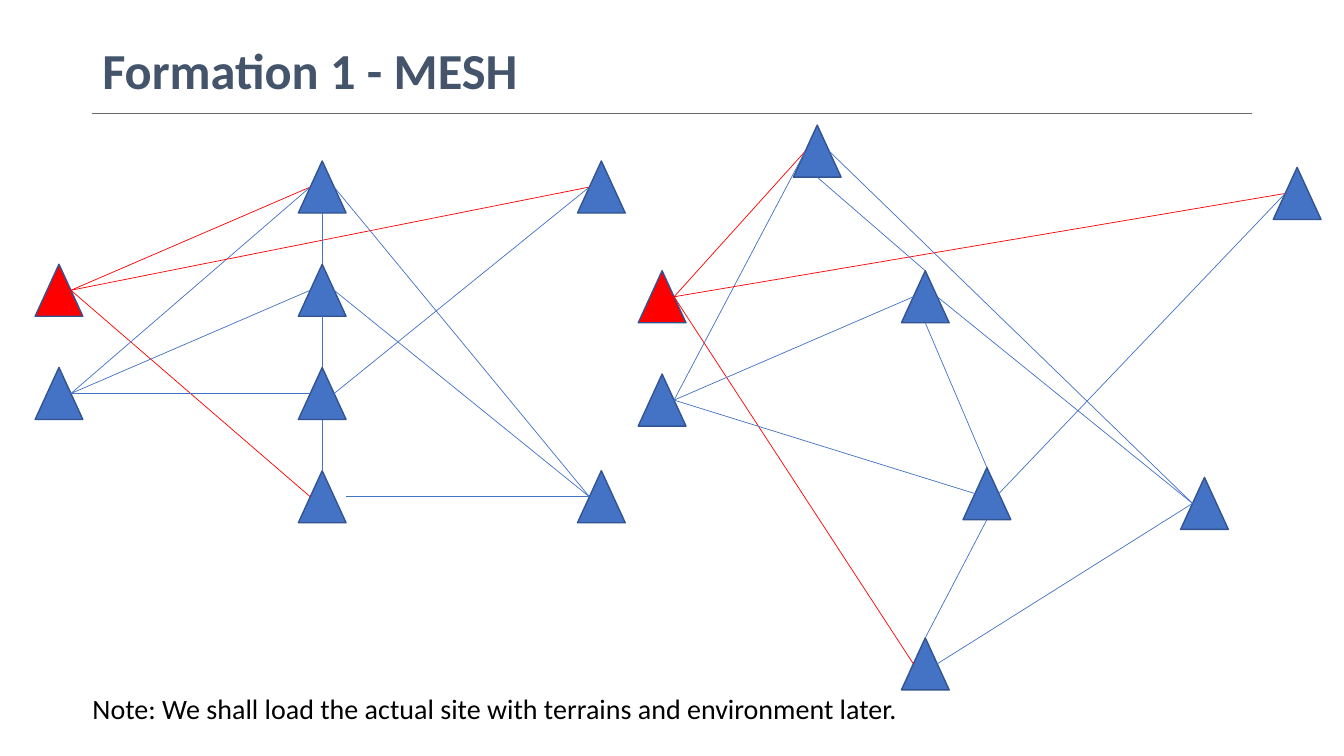
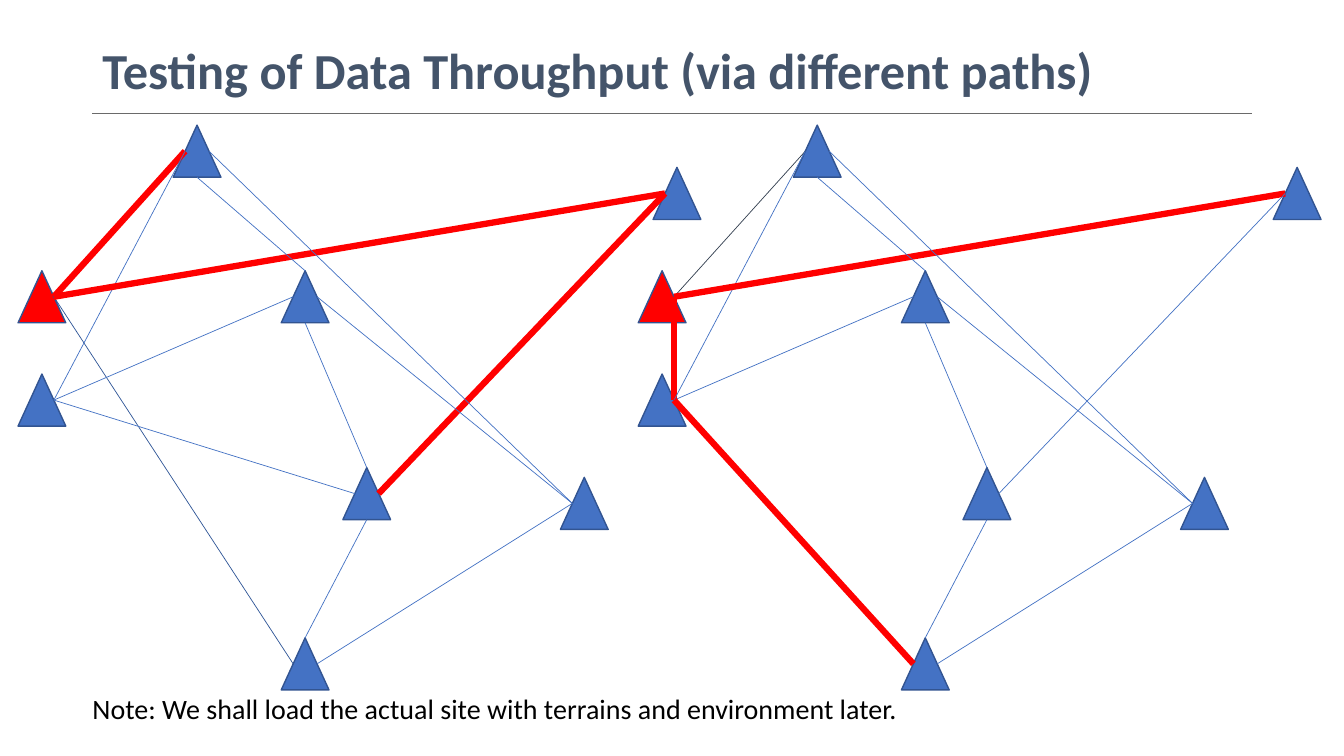
from lxml import etree
from pptx import Presentation
from pptx.dml.color import RGBColor
from pptx.enum import shapes, text
from pptx.oxml import ns
from pptx.util import Pt

BLUE = RGBColor(0x44, 0x72, 0xC4)
OUTLINE = RGBColor(0x32, 0x54, 0x91)
RED = RGBColor(0xFF, 0x00, 0x00)
SLATE = RGBColor(0x44, 0x54, 0x6A)
DARK_SLATE = RGBColor(0x33, 0x3F, 0x50)
NAVY = RGBColor(0x2F, 0x55, 0x97)
GREY = RGBColor(0x6A, 0x6A, 0x6A)
BLACK = RGBColor(0, 0, 0)
FONT = "Calibri"

# Line styles: colour, width
PLAIN, SOURCE = (BLUE, 0.5), (RED, 0.5)
ROUTE = (RED, 4.5)
SPARE, BYPASSED = (DARK_SLATE, 0.5), (NAVY, 0.5)

# Node size, and the points on a triangle where links attach (share of width, height)
NODE_WIDTH, NODE_HEIGHT = 34.1, 37.2
SIDES = {"top": (0.5, 0), "left": (0.25, 0.5), "bottom": (0.5, 1),
         "right": (0.75, 0.5), "corner": (1, 0.5)}

# Node layouts: left, top inside a panel
ROWS = [115 + 73.75 * row for row in range(4)]
GRID = {"upper": (188, ROWS[0]), "middle": (188, ROWS[1]),
        "lower": (188, ROWS[2]), "base": (188, ROWS[3]),
        "east": (387.4, ROWS[0]), "southeast": (387.4, ROWS[3]),
        "source": (0, ROWS[1]), "west": (0, ROWS[2])}
SPREAD = {"upper": (110.8, 89.4), "middle": (188, 193.4),
          "lower": (232, 334), "base": (188, 455.6),
          "east": (453.6, 119.6), "southeast": (387.4, 341),
          "source": (0, 193.4), "west": (0, 267.2)}

# The mesh: from node, side, to node, side
LINKS = [
    ("source", "right", "upper", "left"),
    ("source", "right", "base", "left"),
    ("west", "right", "upper", "left"),
    ("west", "right", "middle", "left"),
    ("west", "right", "lower", "left"),
    ("east", "left", "source", "right"),
    ("east", "left", "lower", "right"),
    ("southeast", "left", "middle", "right"),
    ("southeast", "left", "upper", "right"),
    ("southeast", "left", "base", "right"),
    ("middle", "top", "upper", "bottom"),
    ("middle", "bottom", "lower", "top"),
    ("lower", "bottom", "base", "top"),
]
SOURCE_LINKS = {("source", "upper"): SOURCE, ("source", "base"): SOURCE,
                ("east", "source"): SOURCE}

# Panels: left edge, layout, styles by link, links with other ends
MESH_GRID = (25.1, GRID, SOURCE_LINKS,
             {("southeast", "base"): ("southeast", "left", "base", "corner")})
MESH_SPREAD = (455.9, SPREAD, SOURCE_LINKS, {})
UPPER_PATH = (12.9, SPREAD, {
    ("source", "upper"): ROUTE, ("source", "base"): BYPASSED,
    ("east", "source"): ROUTE, ("east", "lower"): ROUTE}, {})
WEST_PATH = (455.9, SPREAD, {
    ("source", "upper"): SPARE, ("source", "west"): ROUTE,
    ("west", "base"): ROUTE, ("east", "source"): ROUTE}, {
    ("source", "base"): ("source", "right", "west", "right"),
    ("west", "lower"): ("west", "right", "base", "left")})

NOTE = "Note: We shall load the actual site with terrains and environment later."
SLIDES = [
    ("Formation 1 - MESH", [MESH_GRID, MESH_SPREAD]),
    ("Testing of Data Throughput (via different paths)", [WEST_PATH, UPPER_PATH]),
]


def add_text(slide, words, left, top, width, height, *, size, color,
             bold=False, anchor=text.MSO_ANCHOR.TOP):
    frame = slide.shapes.add_textbox(Pt(left), Pt(top), Pt(width), Pt(height)).text_frame
    frame.word_wrap = True
    frame.vertical_anchor = anchor
    paragraph = frame.paragraphs[0]
    paragraph.text = words
    paragraph.line_spacing = 0.9
    font = paragraph.font
    font.name, font.size, font.bold = FONT, Pt(size), bold
    font.color.rgb = color


def add_line(slide, start, end, color, width):
    line = slide.shapes.add_connector(
        shapes.MSO_CONNECTOR.STRAIGHT, *(Pt(value) for value in (*start, *end)))
    line.line.color.rgb = color
    line.line.width = Pt(width)
    etree.SubElement(line._element.spPr, ns.qn("a:effectLst"))


def add_node(slide, left, top, color):
    node = slide.shapes.add_shape(
        shapes.MSO_SHAPE.ISOSCELES_TRIANGLE,
        Pt(left), Pt(top), Pt(NODE_WIDTH), Pt(NODE_HEIGHT))
    node.shadow.inherit = False
    node.fill.solid()
    node.fill.fore_color.rgb = color
    node.line.color.rgb = OUTLINE
    node.line.width = Pt(1)


def add_panel(slide, panel_left, layout, styles, rerouted):
    def attach(name, side):
        left, top = layout[name]
        across, down = SIDES[side]
        return panel_left + left + across * NODE_WIDTH, top + down * NODE_HEIGHT

    for name, (left, top) in layout.items():
        add_node(slide, panel_left + left, top, RED if name == "source" else BLUE)
    for link in LINKS:
        start, start_side, end, end_side = rerouted.get((link[0], link[2]), link)
        add_line(slide, attach(start, start_side), attach(end, end_side),
                 *styles.get((start, end), PLAIN))


def add_frame(slide, title):
    # Title, note and rule shared by all slides
    add_text(slide, title, 66, 28.8, 828, 47.5, size=36, color=SLATE, bold=True,
             anchor=text.MSO_ANCHOR.MIDDLE)
    add_text(slide, NOTE, 59, 493.2, 828, 32.4, size=20, color=BLACK)
    add_line(slide, (66, 81), (894, 81), GREY, 0.5)


def main():
    presentation = Presentation()
    presentation.slide_width, presentation.slide_height = Pt(960), Pt(540)
    for title, panels in SLIDES:
        slide = presentation.slides.add_slide(presentation.slide_layouts[6])
        add_frame(slide, title)
        for panel in panels:
            add_panel(slide, *panel)
    presentation.save("out.pptx")


if __name__ == "__main__":
    main()
